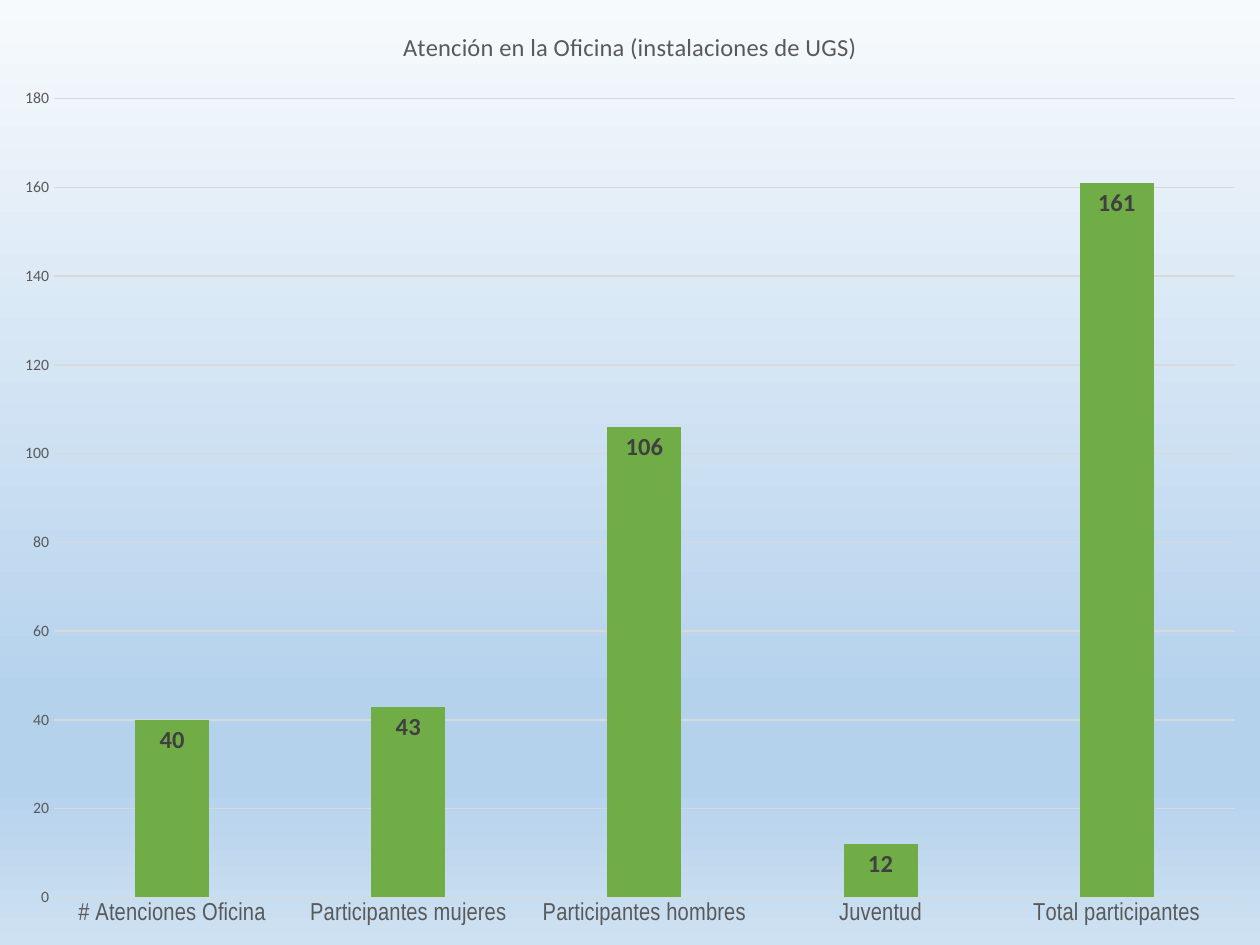
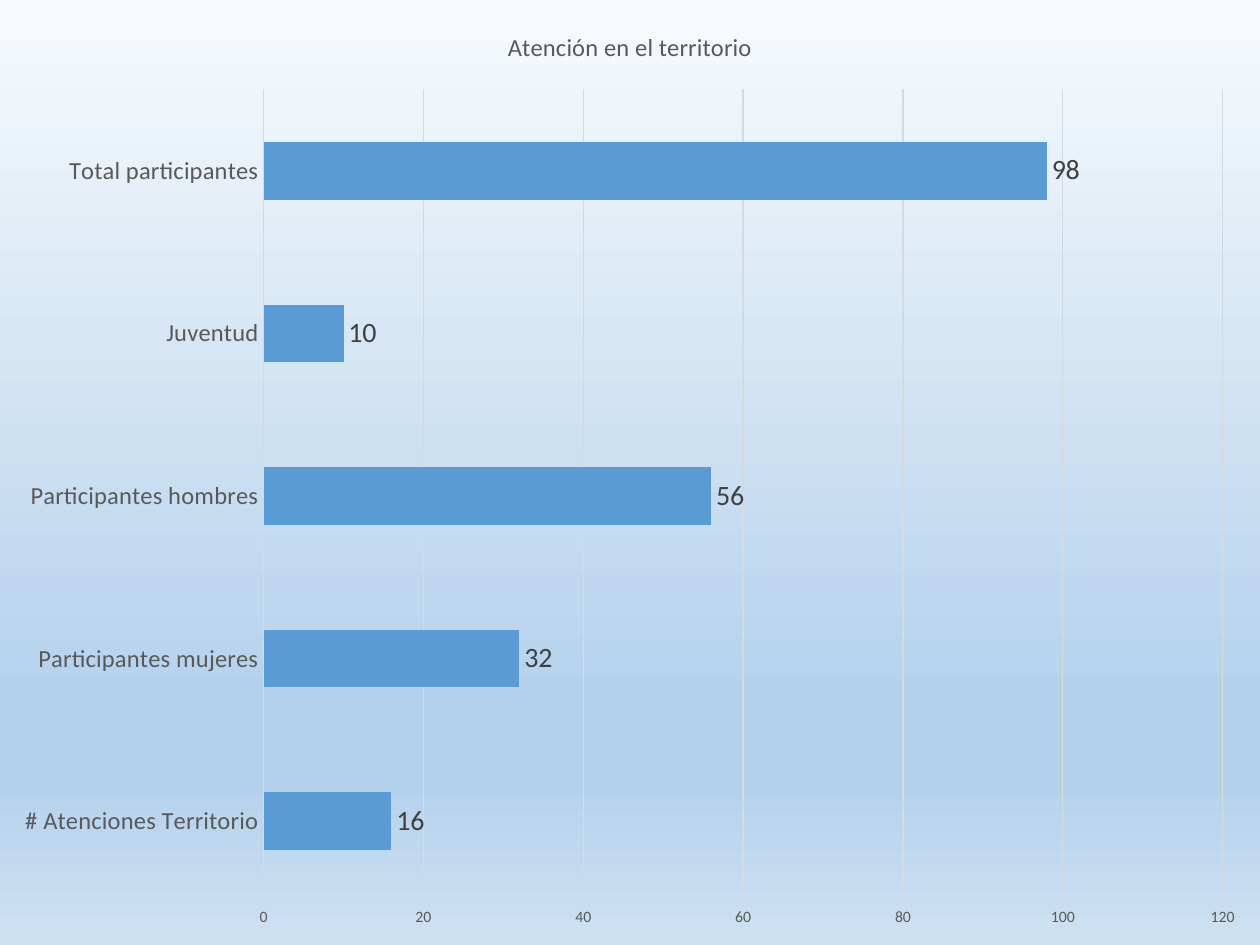
"""Build two bar charts of office and field attendance on a shared gradient."""
from copy import deepcopy
from dataclasses import dataclass

from pptx import Presentation
from pptx.chart.data import CategoryChartData
from pptx.dml.color import RGBColor
from pptx.enum.chart import XL_CHART_TYPE, XL_LABEL_POSITION, XL_TICK_MARK
from pptx.oxml.ns import qn
from pptx.util import Pt

COLUMNS = XL_CHART_TYPE.COLUMN_CLUSTERED
BARS = XL_CHART_TYPE.BAR_CLUSTERED
INSIDE_END = XL_LABEL_POSITION.INSIDE_END
OUTSIDE_END = XL_LABEL_POSITION.OUTSIDE_END
NO_TICK = XL_TICK_MARK.NONE


@dataclass(frozen=True)
class Theme:
    font: str = "Calibri"
    narrow_font: str = "Arial Narrow"
    text: str = "595959"
    value: str = "404040"
    rule: str = "D9D9D9"
    office: str = "70AD47"
    field: str = "5B9BD5"
    sky: tuple = ((0, "F7FAFD"), (74, "B5D2EC"), (83, "B5D2EC"), (100, "CEE1F2"))
    base_size: int = 10
    scale_size: int = 9
    heading_size: int = 14
    large_value_size: int = 16
    rule_width: float = 0.75


THEME = Theme()
WIDTH, HEIGHT = Pt(720), Pt(540)
SHARED_GROUPS = ["Participantes mujeres", "Participantes hombres", "Juventud", "Total participantes"]


class Deck:
    def __init__(self, theme):
        self.theme = theme
        self.prs = Presentation()
        self.prs.slide_width, self.prs.slide_height = WIDTH, HEIGHT
        self.slide = None
        self.paint_background()

    def paint_background(self):
        master = self.prs.slide_master
        fill = master.background.fill
        fill.gradient()
        fill.gradient_angle = 270
        stops = master.element.find(".//" + qn("a:gsLst"))
        for _ in range(len(self.theme.sky) - len(stops)):
            stops.append(deepcopy(stops[0]))
        for stop, (percent, color) in zip(fill.gradient_stops, self.theme.sky):
            stop.position = percent / 100
            stop.color.rgb = RGBColor.from_string(color)

    def new_slide(self):
        self.slide = self.prs.slides.add_slide(self.prs.slide_layouts[6])

    def style_font(self, font, size, color, name=None, bold=False):
        font.name = name or self.theme.font
        font.size = Pt(size)
        font.bold = bold
        font.color.rgb = RGBColor.from_string(color)

    def style_rule(self, line):
        line.width = Pt(self.theme.rule_width)
        line.color.rgb = RGBColor.from_string(self.theme.rule)

    def style_axes(self, chart, maximum, group_font):
        groups, scale = chart.category_axis, chart.value_axis
        for axis in (groups, scale):
            axis.major_tick_mark = axis.minor_tick_mark = NO_TICK
        groups.has_major_gridlines = False
        self.style_font(groups.tick_labels.font, self.theme.heading_size, self.theme.text, group_font)
        self.style_rule(groups.format.line)
        scale.minimum_scale, scale.maximum_scale, scale.major_unit = 0, maximum, 20
        scale.has_major_gridlines = True
        self.style_rule(scale.major_gridlines.format.line)
        scale.format.line.fill.background()
        self.style_font(scale.tick_labels.font, self.theme.scale_size, self.theme.text)

    def add_chart(self, kind, heading, first_group, counts, color, maximum, gap, overlap,
                  value_size, value_position, value_bold=False, group_font=None):
        data = CategoryChartData()
        data.categories = [first_group] + SHARED_GROUPS
        data.add_series("Series 1", counts)
        chart = self.slide.shapes.add_chart(kind, 0, 0, WIDTH, HEIGHT, data).chart
        self.style_font(chart.font, self.theme.base_size, "000000")
        chart.has_legend = False
        chart.has_title = True
        title_run = chart.chart_title.text_frame.paragraphs[0].add_run()
        title_run.text = heading
        self.style_font(title_run.font, self.theme.heading_size, self.theme.text)
        self.style_axes(chart, maximum, group_font)
        plot = chart.plots[0]
        plot.vary_by_categories = False
        plot.gap_width, plot.overlap = gap, overlap
        attendance = plot.series[0]
        attendance.format.fill.solid()
        attendance.format.fill.fore_color.rgb = RGBColor.from_string(color)
        values = attendance.data_labels
        values.show_value = True
        values.position = value_position
        self.style_font(values.font, value_size, self.theme.value, bold=value_bold)


def main():
    deck = Deck(THEME)
    deck.new_slide()
    deck.add_chart(COLUMNS, "Atención en la Oficina (instalaciones de UGS)", "# Atenciones Oficina",
                   (40, 43, 106, 12, 161), THEME.office, 180, 219, -27,
                   THEME.heading_size, INSIDE_END, True, THEME.narrow_font)
    deck.new_slide()
    deck.add_chart(BARS, "Atención en el territorio", "# Atenciones Territorio",
                   (16, 32, 56, 10, 98), THEME.field, 120, 182, 0,
                   THEME.large_value_size, OUTSIDE_END)
    deck.prs.save("out.pptx")


if __name__ == "__main__":
    main()
